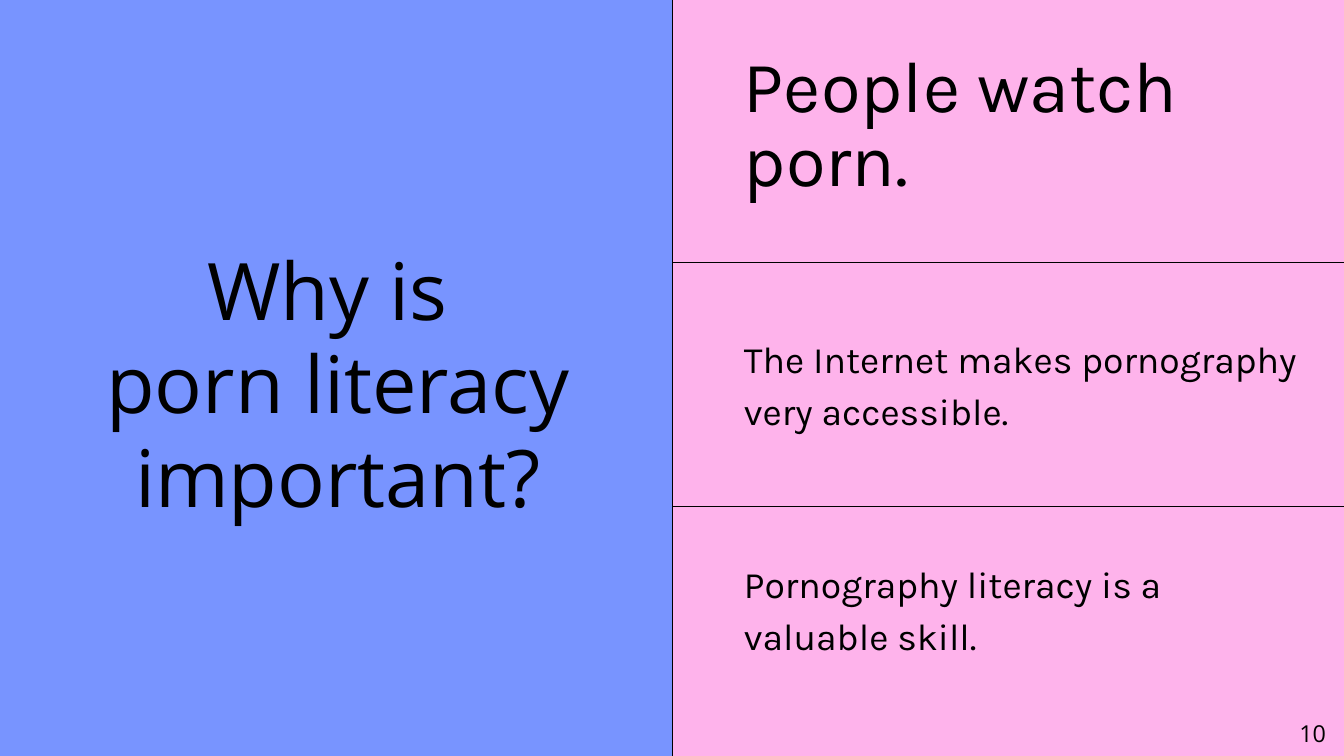
import pptx
import pptx.util
import pptx.dml.color
import pptx.enum.shapes
import pptx.enum.text
import pptx.oxml
from pptx.util import Cm

HUES = {"ink": "000000", "blue": "7894FF", "pink": "FEB3EB"}
WIDE, HIGH = 50.8, 28.58
SPLIT = 25.43
ALIGN = pptx.enum.text.PP_ALIGN
ANCHOR = pptx.enum.text.MSO_ANCHOR


class Deck:
    def __init__(self):
        self.file = pptx.Presentation()
        self.file.slide_width = Cm(WIDE)
        self.file.slide_height = Cm(HIGH)
        self.slide = self.file.slides.add_slide(self.file.slide_layouts[5])
        self.paint(self.slide.background.fill, "pink")

    def paint(self, fill, hue):
        fill.solid()
        fill.fore_color.rgb = pptx.dml.color.RGBColor.from_string(HUES[hue])

    def panel(self, x, y, w, h, hue):
        kind = pptx.enum.shapes.MSO_SHAPE.RECTANGLE
        box = self.slide.shapes.add_shape(kind, Cm(x), Cm(y), Cm(w), Cm(h))
        box.shadow.inherit = False
        box.line.fill.background()
        self.paint(box.fill, hue)

    def rule(self, x1, y1, x2, y2):
        kind = pptx.enum.shapes.MSO_CONNECTOR.STRAIGHT
        line = self.slide.shapes.add_connector(kind, Cm(x1), Cm(y1), Cm(x2), Cm(y2))
        line.line.width = pptx.util.Pt(0.75)
        self.paint(line.line.fill, "ink")
        props = line._element.spPr
        props.append(pptx.oxml.parse_xml(
            '<a:effectLst xmlns:a="http://schemas.openxmlformats.org/drawingml/2006/main"/>'))

    def style(self, frame, text, font, size, lead=None, align=ALIGN.LEFT,
              anchor=ANCHOR.TOP, inset=0):
        frame.text = text
        frame.word_wrap = True
        frame.auto_size = pptx.enum.text.MSO_AUTO_SIZE.NONE
        frame.vertical_anchor = anchor
        frame.margin_left = frame.margin_right = Cm(inset)
        frame.margin_top = frame.margin_bottom = Cm(inset / 2)
        for para in frame.paragraphs:
            para.alignment = align
            if lead:
                para.line_spacing = pptx.util.Pt(lead)
            for run in para.runs:
                run.font.name = font
                run.font.size = pptx.util.Pt(size)
                self.paint(run.font.fill, "ink")

    def title(self, x, y, w, h, text, *look, **more):
        box = self.slide.shapes.title
        box.left, box.top, box.width, box.height = Cm(x), Cm(y), Cm(w), Cm(h)
        self.style(box.text_frame, text, *look, **more)
        tree = box.element.getparent()
        tree.append(box.element)

    def text(self, x, y, w, h, text, *look, **more):
        box = self.slide.shapes.add_textbox(Cm(x), Cm(y), Cm(w), Cm(h))
        self.style(box.text_frame, text, *look, **more)


def main():
    deck = Deck()
    deck.rule(SPLIT, 0, SPLIT, HIGH)
    deck.panel(0, 0, 25.4, HIGH, "blue")
    for y in (9.91, 19.15):
        deck.rule(SPLIT, y, WIDE, y)

    deck.title(2.18, 9.17, 21.18, 10.59, "Why is \nporn literacy important?",
               "Open Sans", 85, 100.3, align=ALIGN.CENTER)

    points = (
        (2.01, 20.98, 7.34, "People watch porn.", 77.5, 79),
        (12.42, 20.98, 5.54, "The Internet makes pornography very accessible.", 40, 56),
        (20.93, 18.69, 5.54, "Pornography literacy is a valuable skill.", 40, 56),
    )
    for y, w, h, text, size, lead in points:
        deck.text(28.12, y, w, h, text, "Karla", size, lead)

    deck.text(44.45, 27.2, 5.92, 1.02, "10", "Open Sans", 25,
              align=ALIGN.RIGHT, anchor=ANCHOR.MIDDLE, inset=0.25)
    deck.file.save("out.pptx")


if __name__ == "__main__":
    main()
